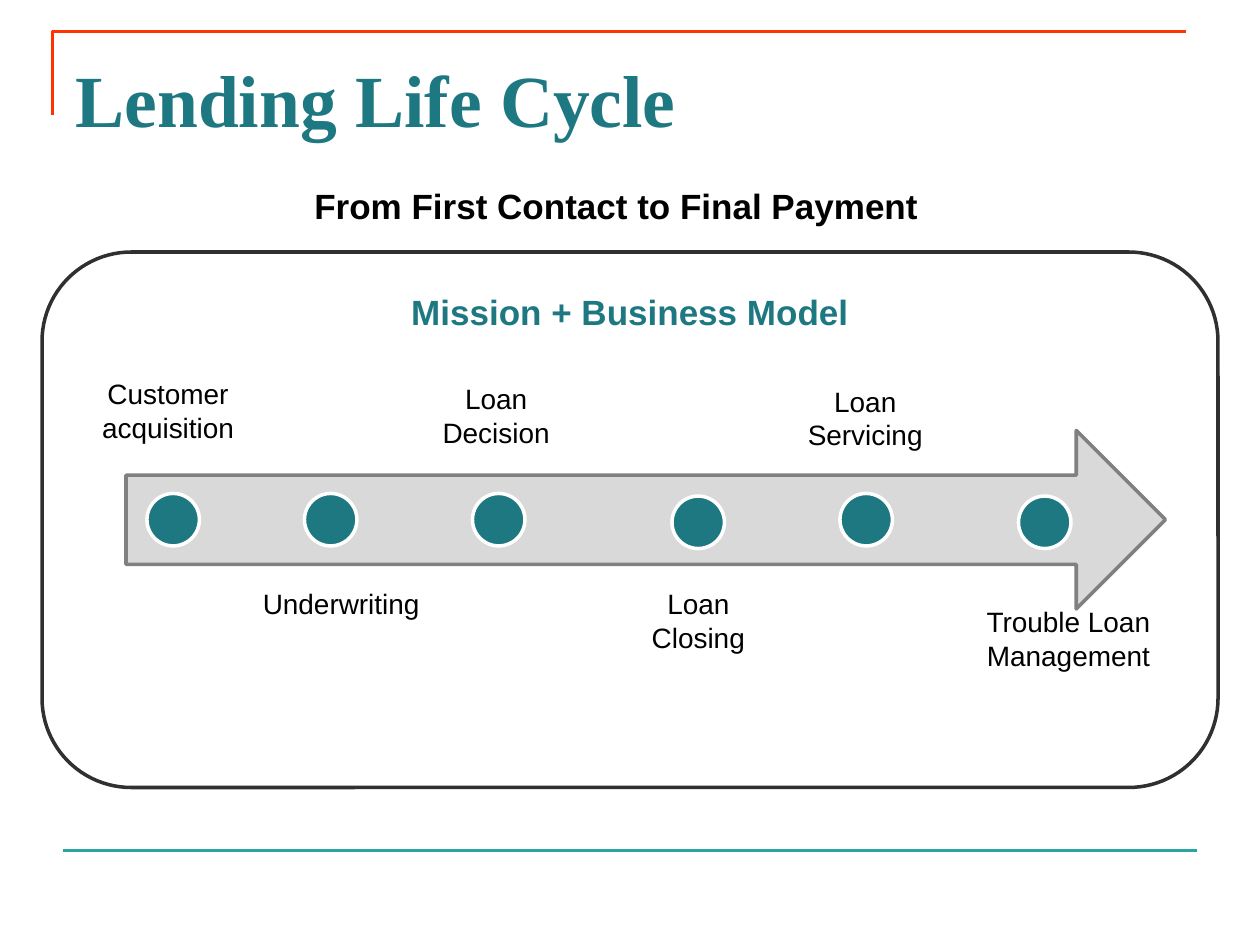
from lxml.etree import SubElement
from pptx import Presentation
from pptx.dml.color import RGBColor
from pptx.enum.shapes import MSO_CONNECTOR as Connector, MSO_SHAPE as Shape
from pptx.enum.text import MSO_ANCHOR as Anchor, MSO_AUTO_SIZE as AutoSize, PP_ALIGN as Align
from pptx.oxml.ns import qn
from pptx.util import Inches, Pt

TEAL = RGBColor(0x1E, 0x78, 0x82)
AQUA = RGBColor(0x29, 0xA6, 0xA3)
RED = RGBColor(0xFF, 0x33, 0x00)
BLACK = RGBColor(0x00, 0x00, 0x00)
CHARCOAL = RGBColor(0x30, 0x30, 0x30)
GREY = RGBColor(0x80, 0x80, 0x80)
SILVER = RGBColor(0xD9, 0xD9, 0xD9)
WHITE = RGBColor(0xFF, 0xFF, 0xFF)

COLUMNS, ROWS = 120, 90
CELL = Inches(10) // COLUMNS
DOT = 5

STAGES = [
    ("Customer acquisition", 14, 47, (8, 35.3, 16, 7.7)),
    ("Underwriting", 29, 47, (23.5, 55.3, 18, 4.4)),
    ("Loan Decision", 45, 47, (39.25, 35.75, 16, 7.7)),
    ("Loan Closing", 64, 47.25, (58.5, 55.3, 16, 7.7)),
    ("Loan Servicing", 80, 47, (74.4, 36, 16, 7.7)),
    ("Trouble Loan Management", 97, 47.25, (91.5, 57, 20.5, 7.7)),
]


def grid(*units):
    """Turn columns and rows into slide lengths."""
    return [round(unit * CELL) for unit in units]


def add_run(paragraph, words, size, color, bold=False, font="Arial"):
    """Append one formatted run to a paragraph."""
    run = paragraph.add_run()
    run.text = words
    run.font.name, run.font.size, run.font.bold = font, Pt(size), bold
    run.font.color.rgb = color


def add_title(slide, words):
    """Place and fill the title placeholder."""
    title = slide.shapes.title
    title.left, title.top, title.width, title.height = grid(6, 3.6, 108, 11.5)
    frame = title.text_frame
    frame.vertical_anchor = Anchor.MIDDLE
    frame.paragraphs[0].alignment = Align.LEFT
    add_run(frame.paragraphs[0], words, 42, TEAL, True, "Times New Roman")


def add_label(slide, words, box, size=16, color=BLACK, bold=False):
    """Add a centred, wrapping text box."""
    frame = slide.shapes.add_textbox(*grid(*box)).text_frame
    frame.word_wrap = True
    frame.auto_size = AutoSize.SHAPE_TO_FIT_TEXT
    frame.paragraphs[0].alignment = Align.CENTER
    add_run(frame.paragraphs[0], words, size, color, bold)


def add_outlined(slide, preset, box, fill, outline):
    """Add a filled preset shape with a two-point outline."""
    shape = slide.shapes.add_shape(preset, *grid(*box))
    shape.shadow.inherit = False
    shape.fill.solid()
    shape.fill.fore_color.rgb = fill
    shape.line.color.rgb, shape.line.width = outline, Pt(2)


def add_corner_rule(slide):
    """Draw the angled rule around the title."""
    builder = slide.shapes.build_freeform(*grid(5, 11))
    builder.add_line_segments([grid(5, 3), grid(113, 3)], close=False)
    corner = builder.convert_to_shape()
    corner.shadow.inherit = False
    corner.fill.background()
    corner.line.color.rgb, corner.line.width = RED, Pt(1.5)


def add_footer_rule(slide):
    """Draw the straight rule at the foot of the slide."""
    rule = slide.shapes.add_connector(Connector.STRAIGHT, *grid(6, 81, 114, 81))
    rule.line.color.rgb, rule.line.width = AQUA, Pt(1.5)
    SubElement(rule._element.spPr, qn("a:effectLst"))


def main():
    """Build and save the slide."""
    deck = Presentation()
    deck.slide_width, deck.slide_height = grid(COLUMNS, ROWS)
    slide = deck.slides.add_slide(deck.slide_layouts[5])
    add_corner_rule(slide)
    add_footer_rule(slide)
    add_outlined(slide, Shape.ROUNDED_RECTANGLE, (4, 24, 112, 51), WHITE, CHARCOAL)
    add_title(slide, "Lending Life Cycle")
    add_outlined(slide, Shape.RIGHT_ARROW, (12, 41, 99, 17), SILVER, GREY)
    for stage, column, row, label_box in STAGES:
        add_outlined(slide, Shape.FLOWCHART_CONNECTOR, (column, row, DOT, DOT), TEAL, WHITE)
        add_label(slide, stage, label_box)
    add_label(slide, "From First Contact to Final Payment", (27, 17, 63.4, 5.3), 20, bold=True)
    add_label(slide, "Mission + Business Model", (28.3, 27.1, 63.4, 5.3), 20, TEAL, True)
    deck.save("out.pptx")


if __name__ == "__main__":
    main()
